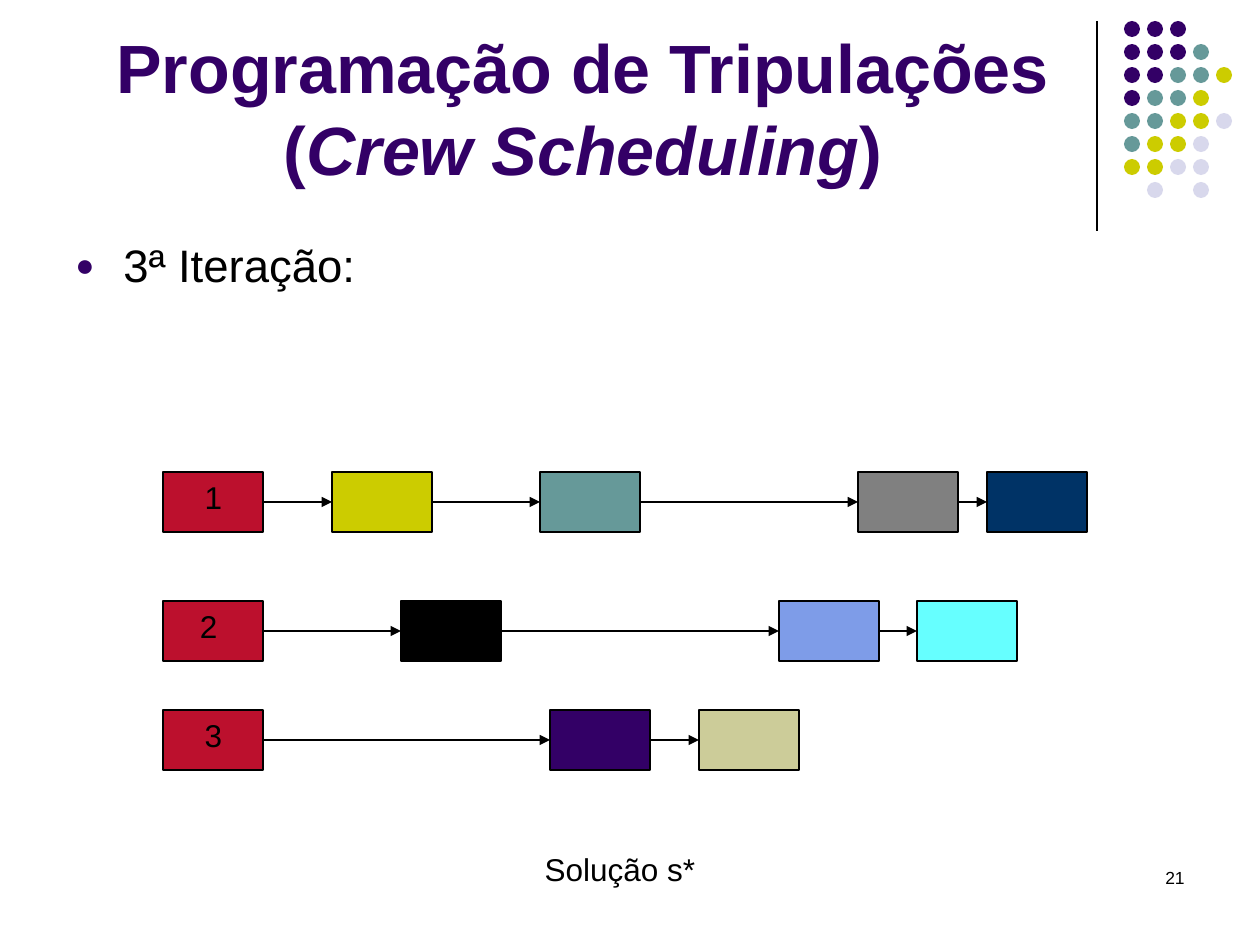
"""Build the crew scheduling slide showing the third iteration's solution."""
from itertools import pairwise

from lxml import etree
from pptx import Presentation
from pptx.dml.color import RGBColor
from pptx.enum.shapes import MSO_CONNECTOR, MSO_SHAPE
from pptx.enum.text import MSO_ANCHOR, PP_ALIGN
from pptx.oxml.ns import qn
from pptx.util import Emu, Pt

STRAIGHT = MSO_CONNECTOR.STRAIGHT
RECTANGLE, OVAL = MSO_SHAPE.RECTANGLE, MSO_SHAPE.OVAL
TOP, BOTTOM = MSO_ANCHOR.TOP, MSO_ANCHOR.BOTTOM
LEFT, CENTER, RIGHT = PP_ALIGN.LEFT, PP_ALIGN.CENTER, PP_ALIGN.RIGHT

THEME = {
    "font": "Arial",
    "ink": "000000",
    "purple": "330066",
    "teal": "669999",
    "olive": "CCCC00",
    "lilac": "D8D8EC",
    "crew": "BC102D",
    "title": 39,
    "body": 26,
    "label": 18,
    "number": 10,
    "line": 0.75,
}

TITLE = [
    ("Programação de Tripulações (", {}),
    ("Crew Scheduling", {"italic": True}),
    (")", {}),
]
BODY = "3ª Iteração:"
CAPTION = "Solução s*"
PAGE_NUMBER = "21"

CREWS = [
    {"name": "1", "top": 472, "label_left": 184,
     "tasks": [(332, "CCCC00"), (540, "669999"), (858, "808080"), (987, "003366")]},
    {"name": "2", "top": 601, "label_left": 174,
     "tasks": [(401, "000000"), (779, "7E9CE8"), (917, "66FFFF")]},
    {"name": "3", "top": 710, "label_left": 184,
     "tasks": [(550, "330066"), (699, "CCCC99")]},
]
CREW_LEFT, LABEL_RIGHT = 163, 243
TASK_WIDTH, TASK_HEIGHT, LABEL_HEIGHT = 100, 60, 50

DOT_ROWS = ["PPP", "PPPT", "PPTTO", "PTTO", "TTOOL", "TOOL", "OOLL", " L L"]
DOT_COLORS = {"P": "purple", "T": "teal", "O": "olive", "L": "lilac"}
DOT_LEFT, DOT_TOP, DOT_SIZE, DOT_STEP = 1124, 21, 16, 23


def px(length):
    return Emu(round(length * 914400 / 126))


def rgb(color):
    return RGBColor.from_string(color)


def add_filled(page, kind, place, color):
    shape = page.shapes.add_shape(kind, *map(px, place))
    shape.shadow.inherit = False
    shape.fill.solid()
    shape.fill.fore_color.rgb = rgb(color)
    shape.line.fill.background()
    return shape


def add_line(page, start, end, arrow=False):
    line = page.shapes.add_connector(STRAIGHT, *map(px, start + end))
    line.line.color.rgb = rgb(THEME["ink"])
    line.line.width = Pt(THEME["line"])
    if arrow:
        outline = line.line._get_or_add_ln()
        etree.SubElement(outline, qn("a:tailEnd"), type="triangle")
    etree.SubElement(line._element.spPr, qn("a:effectLst"))


def add_text(page, place, spans, size, align=CENTER, anchor=TOP, **formats):
    box = page.shapes.add_textbox(*map(px, place))
    frame = box.text_frame
    frame.word_wrap = True
    frame.vertical_anchor = anchor
    para = frame.paragraphs[0]
    para.alignment = align
    color = formats.pop("color", THEME["ink"])
    for text, extra in spans:
        span = para.add_run()
        span.text = text
        span.font.color.rgb = rgb(color)
        values = {"name": THEME["font"], "size": Pt(size), **formats, **extra}
        for name, value in values.items():
            setattr(span.font, name, value)
    return para


def add_bullet(para):
    para.line_spacing = 0.9
    properties = para._p.get_or_add_pPr()
    properties.set("marL", str(px(48)))
    properties.set("indent", str(-px(48)))
    color = etree.SubElement(properties, qn("a:buClr"))
    etree.SubElement(color, qn("a:srgbClr"), val=THEME["purple"])
    etree.SubElement(properties, qn("a:buSzPct"), val="70000")
    etree.SubElement(properties, qn("a:buFont"), typeface=THEME["font"])
    etree.SubElement(properties, qn("a:buChar"), char="●")


def add_decoration(page):
    add_line(page, (1097, 21), (1097, 231))
    for row, codes in enumerate(DOT_ROWS):
        for column, code in enumerate(codes):
            if code in DOT_COLORS:
                place = (DOT_LEFT + column * DOT_STEP, DOT_TOP + row * DOT_STEP,
                         DOT_SIZE, DOT_SIZE)
                add_filled(page, OVAL, place, THEME[DOT_COLORS[code]])


def add_crew(page, crew):
    top, left = crew["top"], crew["label_left"]
    chain = [(CREW_LEFT, THEME["crew"]), *crew["tasks"]]
    for task_left, color in chain:
        task = add_filled(page, RECTANGLE, (task_left, top, TASK_WIDTH, TASK_HEIGHT), color)
        task.line.color.rgb = rgb(THEME["ink"])
        task.line.width = Pt(THEME["line"])
    middle = top + TASK_HEIGHT // 2
    for (before, _), (after, _) in pairwise(chain):
        add_line(page, (before + TASK_WIDTH, middle), (after, middle), arrow=True)
    add_text(page, (left, top, LABEL_RIGHT - left, LABEL_HEIGHT),
             [(crew["name"], {})], THEME["label"])


def main():
    deck = Presentation()
    deck.slide_width, deck.slide_height = px(1260), px(945)
    page = deck.slides.add_slide(deck.slide_layouts[6])
    add_decoration(page)
    add_text(page, (903, 861, 294, 63), [(PAGE_NUMBER, {})], THEME["number"], RIGHT)
    add_text(page, (63, 16, 1040, 179), TITLE, THEME["title"], anchor=BOTTOM,
             bold=True, color=THEME["purple"])
    add_bullet(add_text(page, (63, 237, 1134, 607), [(BODY, {})], THEME["body"], LEFT))
    for crew in CREWS:
        add_crew(page, crew)
    add_text(page, (501, 844, 238, LABEL_HEIGHT), [(CAPTION, {})], THEME["label"])
    deck.save("out.pptx")


if __name__ == "__main__":
    main()
